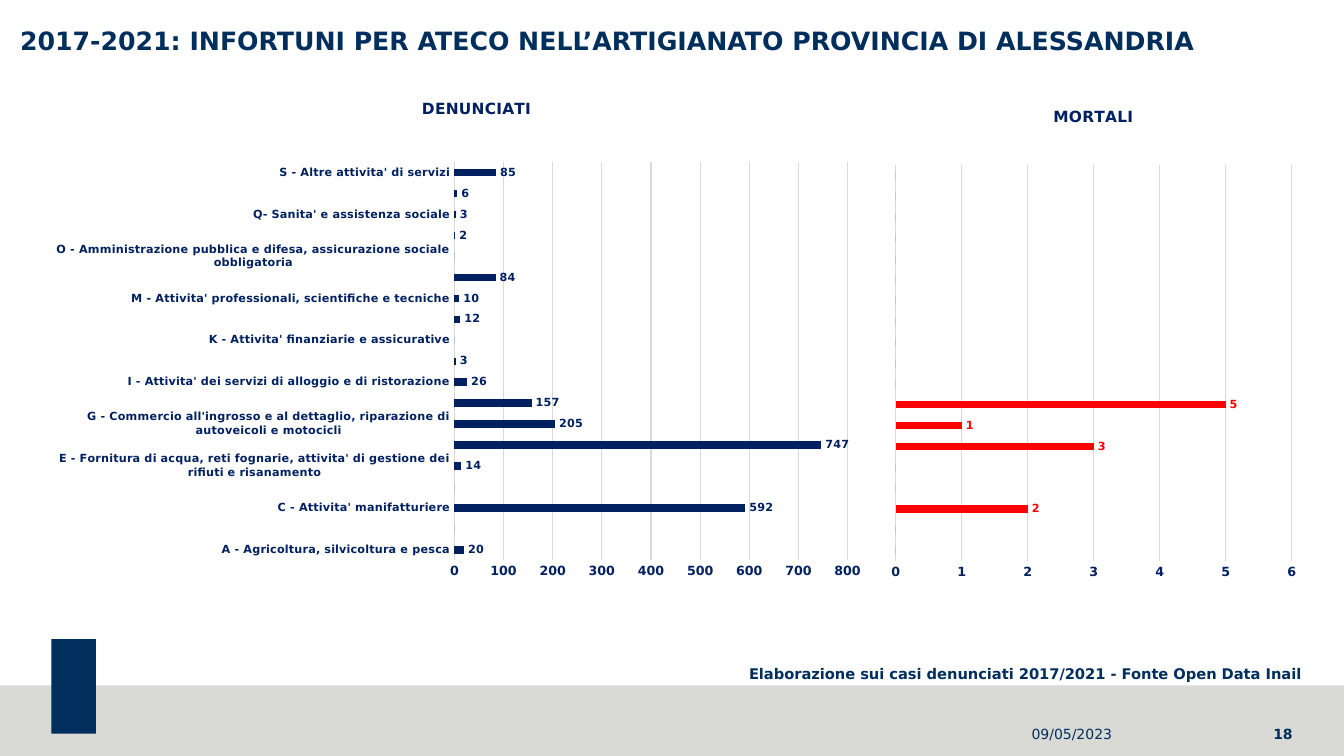
"""Build the slide on craft-sector injuries by ATECO in the province of Alessandria."""
from lxml import etree
from pptx import Presentation
from pptx import util as u
from pptx.chart.data import CategoryChartData
from pptx.dml.color import RGBColor
from pptx.enum import chart as ch, shapes, text
from pptx.oxml.ns import qn

NAVY = RGBColor(0x00, 0x2E, 0x5D)
INK = RGBColor(0x00, 0x20, 0x60)
RED = RGBColor(0xFF, 0x00, 0x00)
BAND = RGBColor(0xD9, 0xD9, 0xD6)
GRID = RGBColor(0xD9, 0xD9, 0xD9)
FONT = "DejaVu Sans"

prs = Presentation()
prs.slide_width, prs.slide_height = u.Inches(13.33), u.Inches(7.5)
s = prs.slides.add_slide(prs.slide_layouts[5])


def area(x, y, w, h):
    """Turn percentages of the slide into left, top, width, height."""
    return [int(share * side / 100) for share, side in
            zip((x, y, w, h), (prs.slide_width, prs.slide_height) * 2)]


def place(parent, index, **parts):
    """Give a chart part a manual layout."""
    for old in parent.findall(qn("c:layout")):
        parent.remove(old)
    layout = etree.Element(qn("c:layout"))
    manual = etree.SubElement(layout, qn("c:manualLayout"))
    for tag, val in parts.items():
        etree.SubElement(manual, qn("c:" + tag)).set("val", str(val))
    parent.insert(index, layout)


for spot, color in [((0, 90.67, 100, 9.33), BAND), ((3.83, 84.53, 3.3, 12.53), NAVY)]:
    sp = s.shapes.add_shape(shapes.MSO_SHAPE.RECTANGLE, *area(*spot))
    sp.shadow.inherit = False
    sp.fill.solid()
    sp.fill.fore_color.rgb = color
    sp.line.fill.background()

title = s.shapes.title
title.left, title.top, title.width, title.height = area(1.5, 3.73, 95.87, 10.13)
number = s.shapes.add_textbox(*area(84.25, 94.4, 11.93, 5.33))
source = s.shapes.add_textbox(*area(54.99, 87.33, 44.11, 3.73))
date = s.shapes.add_textbox(*area(70.89, 94.4, 11.85, 5.33))

LEFT, RIGHT = text.PP_ALIGN.LEFT, text.PP_ALIGN.RIGHT
TOP, MIDDLE = text.MSO_ANCHOR.TOP, text.MSO_ANCHOR.MIDDLE
for sp, words, size, bold, align, anchor in [
    (title, "2017-2021: INFORTUNI PER ATECO NELL’ARTIGIANATO PROVINCIA DI ALESSANDRIA",
     18, True, LEFT, TOP),
    (number, "18", 10, True, RIGHT, MIDDLE),
    (source, "Elaborazione sui casi denunciati 2017/2021 - Fonte Open Data Inail",
     10.5, True, LEFT, TOP),
    (date, "09/05/2023", 10, False, RIGHT, MIDDLE),
]:
    tf = sp.text_frame
    tf.text = words
    tf.auto_size = text.MSO_AUTO_SIZE.NONE
    tf.word_wrap = sp in (title, number)
    tf.vertical_anchor = anchor
    if sp is not source:
        tf.margin_left = tf.margin_top = tf.margin_right = tf.margin_bottom = 0
    p = tf.paragraphs[0]
    p.alignment = align
    for name, val in {"name": FONT, "size": u.Pt(size), "bold": bold}.items():
        setattr(p.font, name, val)
    p.font.color.rgb = NAVY
title.text_frame.paragraphs[0].line_spacing = 0.9

SECTORS = [
    "A - Agricoltura, silvicoltura e pesca",
    "B - Estrazione di minerali da cave e miniere",
    "C - Attivita' manifatturiere",
    "D - Fornitura di energia elettrica, gas, vapore e aria condizionata",
    "E - Fornitura di acqua, reti fognarie, attivita' di gestione dei rifiuti e risanamento",
    "F - Costruzioni",
    "G - Commercio all'ingrosso e al dettaglio, riparazione di autoveicoli e motocicli",
    "H - Trasporto e magazzinaggio",
    "I - Attivita' dei servizi di alloggio e di ristorazione",
    "J - Servizi di informazione e comunicazione",
    "K - Attivita' finanziarie e assicurative",
    "L - Attivita' immobiliari",
    "M - Attivita' professionali, scientifiche e tecniche",
    "N - Noleggio, agenzie di viaggio, servizi di supporto alle imprese",
    "O - Amministrazione pubblica e difesa, assicurazione sociale obbligatoria",
    "P - Istruzione",
    "Q- Sanita' e assistenza sociale",
    "R - Attivita' artistiche, sportive, di intrattenimento e divertimento",
    "S - Altre attivita' di servizi",
]
REPORTED = [20, 0, 592, 0, 14, 747, 205, 157, 26, 3, 0, 12, 10, 84, 0, 2, 3, 6, 85]
FATAL = [0, 0, 2, 0, 0, 3, 1, 5] + [0] * 11

for heading, vals, color, spot, head, plot_box, top, step in [
    ("DENUNCIATI", REPORTED, INK, (3.83, 10.93, 61.07, 73.07),
     (0.448, 0.022), (0.491, 0.144, 0.479, 0.721), 800, 100),
    ("MORTALI", FATAL, RED, (64.97, 10.93, 32.41, 73.07),
     (0.407, 0.038), (0.052, 0.15, 0.909, 0.716), 6, 1),
]:
    data = CategoryChartData(number_format="#,##0")
    data.categories = SECTORS
    data.add_series(heading.capitalize(), vals)
    chart = s.shapes.add_chart(ch.XL_CHART_TYPE.BAR_CLUSTERED, *area(*spot), data).chart
    chart.has_legend = False
    chart.font.name, chart.font.size = "Calibri", u.Pt(10)

    chart.has_title = True
    tf = chart.chart_title.text_frame
    tf.text = heading
    place(chart.chart_title._element, 1, xMode="edge", yMode="edge", x=head[0], y=head[1])
    place(chart._chartSpace.chart.plotArea, 0, layoutTarget="inner", xMode="edge",
          yMode="edge", **dict(zip("xywh", plot_box)))

    plot = chart.plots[0]
    plot.gap_width = 182
    plot.vary_by_categories = False
    fill = plot.series[0].format.fill
    fill.solid()
    fill.fore_color.rgb = color
    plot.has_data_labels = True
    labels = plot.data_labels
    labels.show_value = True
    labels.number_format, labels.number_format_is_linked = "#,##0;;", False
    labels.position = ch.XL_LABEL_POSITION.OUTSIDE_END

    cat, val = chart.category_axis, chart.value_axis
    for axis in (cat, val):
        axis.major_tick_mark = axis.minor_tick_mark = ch.XL_TICK_MARK.NONE
    cat.has_major_gridlines = False
    val.minimum_scale, val.maximum_scale, val.major_unit = 0, top, step
    val.format.line.fill.background()
    for line in (cat.format.line, val.major_gridlines.format.line):
        line.color.rgb, line.width = GRID, u.Pt(0.75)
    for font, size, ink in [
        (tf.paragraphs[0].runs[0].font, 11, INK),
        (cat.tick_labels.font, 8, INK),
        (val.tick_labels.font, 9, INK),
        (labels.font, 8, color),
    ]:
        for name, setting in {"name": FONT, "size": u.Pt(size), "bold": True}.items():
            setattr(font, name, setting)
        font.color.rgb = ink
    cat.visible = vals is REPORTED

prs.save("out.pptx")
